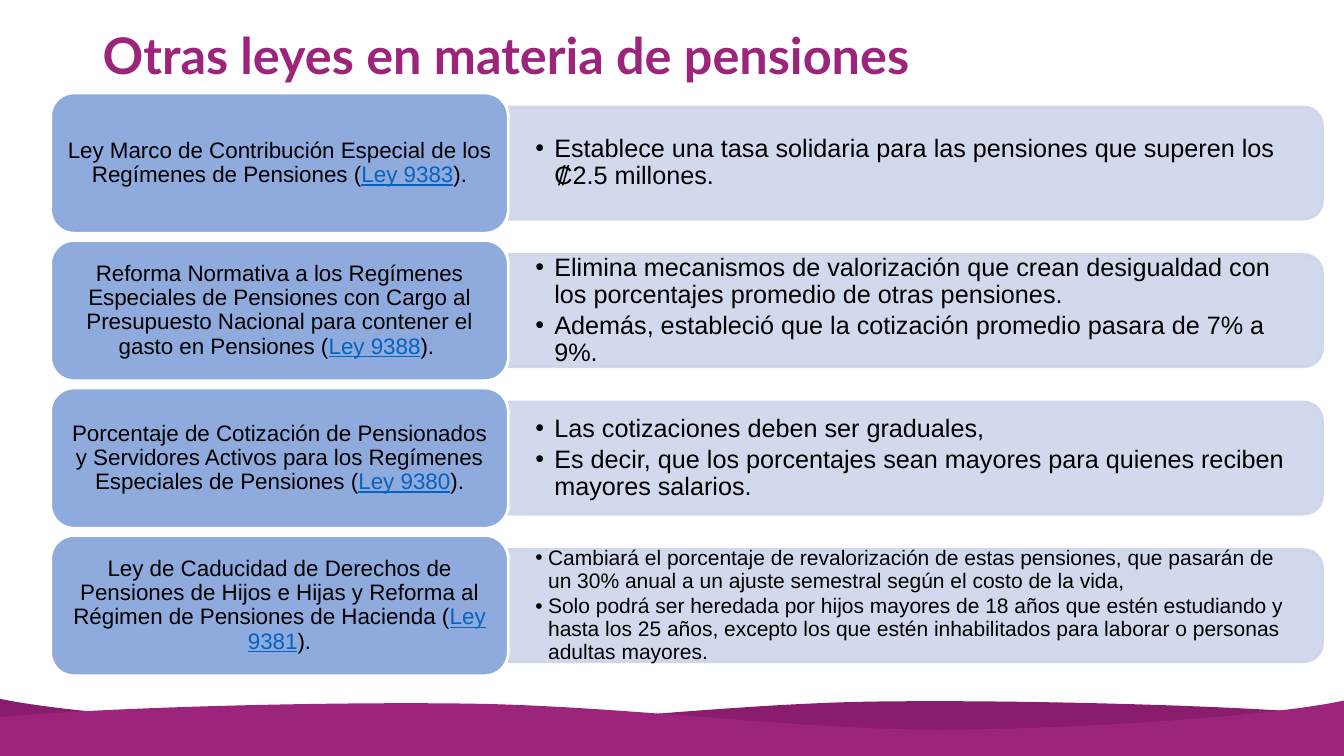
from dataclasses import dataclass

from lxml import etree
from pptx import Presentation
from pptx.dml.color import RGBColor
from pptx.enum.shapes import MSO_SHAPE
from pptx.enum.text import MSO_ANCHOR, MSO_AUTO_SIZE, PP_ALIGN
from pptx.oxml.ns import qn
from pptx.util import Pt

ROUND = MSO_SHAPE.ROUNDED_RECTANGLE
ROUND_TOP = MSO_SHAPE.ROUND_2_SAME_RECTANGLE
MIDDLE = MSO_ANCHOR.MIDDLE
NO_FIT = MSO_AUTO_SIZE.NONE
LEFT, CENTER = PP_ALIGN.LEFT, PP_ALIGN.CENTER

PURPLE, DARK_PURPLE = "9C247B", "891C6C"
CARD_BLUE, PANEL_BLUE, LINK_BLUE = "8FAADC", "CFD5EA", "0563C1"
BLACK, WHITE = "000000", "FFFFFF"

ROW_TOP, ROW_PITCH = 66.4, 105.36
CARD_X, CARD_W, CARD_H = 36.2, 326.9, 100.2
CARD_PAD = 4.9
PANEL_W, PANEL_H = 581.6, 80.1
PANEL_X = CARD_X + CARD_W
NOTE_W, NOTE_H = 577.4, 72.7

Point = tuple[float, float]


@dataclass
class Wave:
    color: str
    start: Point
    curves: list[Point]
    base: list[Point]


@dataclass
class Law:
    name: str
    number: str
    notes: list[str]
    size: float = 18
    indent: float = 13.5
    tail: str = ")."


WAVES = [
    Wave(DARK_PURPLE, (960, 511.2), [
        (904.3, 504.7), (738.7, 499.7), (626.4, 501.1),
        (514.8, 502.6), (391, 519.8), (286.6, 519.8),
        (182.2, 519.1), (49, 509.8), (-0.7, 499),
    ], [(-0.7, 539.3), (960, 540)]),
    Wave(PURPLE, (-0.7, 512.6), [
        (54.7, 506.2), (220.3, 501.1), (332.6, 502.6),
        (445, 504), (568.1, 521.3), (673.2, 521.3),
        (777.6, 520.6), (910.8, 511.2), (960, 500.4),
    ], [(960, 540), (0, 541.4)]),
]

LAWS = [
    Law("Ley Marco de Contribución Especial de los Regímenes de Pensiones (", "Ley 9383", [
        "Establece una tasa solidaria para las pensiones que superen los ₡2.5 millones.",
    ]),
    Law("Reforma Normativa a los Regímenes Especiales de Pensiones con Cargo al "
        "Presupuesto Nacional para contener el gasto en Pensiones (", "Ley 9388", [
            "Elimina mecanismos de valorización que crean desigualdad con los "
            "porcentajes promedio de otras pensiones.",
            "Además, estableció que la cotización promedio pasara de 7% a 9%.",
        ], tail="). "),
    Law("Porcentaje de Cotización de Pensionados y Servidores Activos para los "
        "Regímenes Especiales de Pensiones (", "Ley 9380", [
            "Las cotizaciones deben ser graduales,",
            "Es decir, que los porcentajes sean mayores para quienes reciben mayores salarios.",
        ]),
    Law("Ley de Caducidad de Derechos de Pensiones de Hijos e Hijas y Reforma al "
        "Régimen de Pensiones de Hacienda (", "Ley 9381", [
            "Cambiará el porcentaje de revalorización de estas pensiones, que pasarán de "
            "un 30% anual a un ajuste semestral según el costo de la vida,",
            "Solo podrá ser heredada por hijos mayores de 18 años que estén estudiando y "
            "hasta los 25 años, excepto los que estén inhabilitados para laborar o "
            "personas adultas mayores.",
        ], 15, 9),
]


def rgb(color: str) -> RGBColor:
    return RGBColor.from_string(color)


def paint(sp, fill: str, line: str | None = None) -> None:
    sp.shadow.inherit = False
    sp.fill.solid()
    sp.fill.fore_color.rgb = rgb(fill)
    if line is None:
        sp.line.fill.background()
    else:
        sp.line.color.rgb = rgb(line)
        sp.line.width = Pt(2)


def set_frame(tf, inset_x: float, inset_y: float) -> None:
    tf.word_wrap = True
    tf.auto_size = NO_FIT
    tf.vertical_anchor = MIDDLE
    tf.margin_left = tf.margin_right = Pt(inset_x)
    tf.margin_top = tf.margin_bottom = Pt(inset_y)


def set_paragraph(p, align: PP_ALIGN, after: float = 0) -> None:
    p.alignment = align
    p.line_spacing = 0.9
    p.space_before = Pt(0)
    p.space_after = Pt(after)


def add_run(p, text: str, size: float, color: str = BLACK, font: str = "Arial"):
    r = p.add_run()
    r.text = text
    r.font.name = font
    r.font.size = Pt(size)
    r.font.color.rgb = rgb(color)
    return r


def add_bullet(p, indent: float) -> None:
    pPr = p._p.get_or_add_pPr()
    pPr.set("marL", str(Pt(indent)))
    pPr.set("indent", str(-Pt(indent)))
    clr = etree.SubElement(pPr, qn("a:buClr"))
    etree.SubElement(clr, qn("a:srgbClr"), val=BLACK)
    etree.SubElement(pPr, qn("a:buFont"), typeface="Arial")
    etree.SubElement(pPr, qn("a:buChar"), char="•")


def add_wave(s, wave: Wave) -> None:
    x, y = wave.start
    builder = s.shapes.build_freeform(Pt(x), Pt(y))
    builder.add_line_segments([(Pt(x), Pt(y)) for x, y in wave.curves + wave.base], close=True)
    sp = builder.convert_to_shape()
    paint(sp, wave.color)
    lines = list(sp._element.iter(qn("a:lnTo")))[:len(wave.curves)]
    for i in range(0, len(lines), 3):
        curve = etree.Element(qn("a:cubicBezTo"))
        lines[i].addprevious(curve)
        for line in lines[i:i + 3]:
            curve.append(line[0])
            line.getparent().remove(line)


def add_title(s, text: str) -> None:
    sp = s.shapes.title
    sp.left, sp.top, sp.width, sp.height = Pt(66.2), Pt(17.3), Pt(828), Pt(49)
    set_frame(sp.text_frame, 7.2, 3.6)
    p = sp.text_frame.paragraphs[0]
    set_paragraph(p, LEFT)
    add_run(p, text, 36, PURPLE, "Lato").font.bold = True


def add_panel(s, law: Law, mid: float) -> None:
    sp = s.shapes.add_shape(
        ROUND_TOP, Pt(PANEL_X + (PANEL_W - PANEL_H) / 2), Pt(mid - PANEL_W / 2),
        Pt(PANEL_H), Pt(PANEL_W))
    sp.rotation = 90
    paint(sp, PANEL_BLUE, PANEL_BLUE)
    for clr in sp._element.spPr.iter(qn("a:srgbClr")):
        etree.SubElement(clr, qn("a:alpha"), val="90000")
    box = s.shapes.add_textbox(Pt(PANEL_X), Pt(mid - NOTE_H / 2), Pt(NOTE_W), Pt(NOTE_H))
    tf = box.text_frame
    set_frame(tf, 19.4, 9.8)
    for i, note in enumerate(law.notes):
        p = tf.add_paragraph() if i else tf.paragraphs[0]
        p.level = 1
        set_paragraph(p, LEFT, law.size * 0.15)
        add_bullet(p, law.indent)
        add_run(p, note, law.size)


def add_card(s, law: Law, top: float) -> None:
    sp = s.shapes.add_shape(ROUND, Pt(CARD_X), Pt(top), Pt(CARD_W), Pt(CARD_H))
    paint(sp, CARD_BLUE, WHITE)
    box = s.shapes.add_textbox(Pt(CARD_X + CARD_PAD), Pt(top + CARD_PAD),
                               Pt(CARD_W - 2 * CARD_PAD), Pt(CARD_H - 2 * CARD_PAD))
    set_frame(box.text_frame, 4.8, 2.4)
    p = box.text_frame.paragraphs[0]
    set_paragraph(p, CENTER, 5.6)
    add_run(p, law.name, 16)
    add_run(p, law.number, 16, LINK_BLUE).font.underline = True
    add_run(p, law.tail, 16)


def main() -> None:
    prs = Presentation()
    prs.slide_width, prs.slide_height = Pt(960), Pt(540)
    s = prs.slides.add_slide(prs.slide_layouts[5])
    for wave in WAVES:
        add_wave(s, wave)
    add_title(s, "Otras leyes en materia de pensiones")
    for i, law in enumerate(LAWS):
        top = ROW_TOP + i * ROW_PITCH
        add_panel(s, law, top + CARD_H / 2)
        add_card(s, law, top)
    prs.save("out.pptx")


if __name__ == "__main__":
    main()
